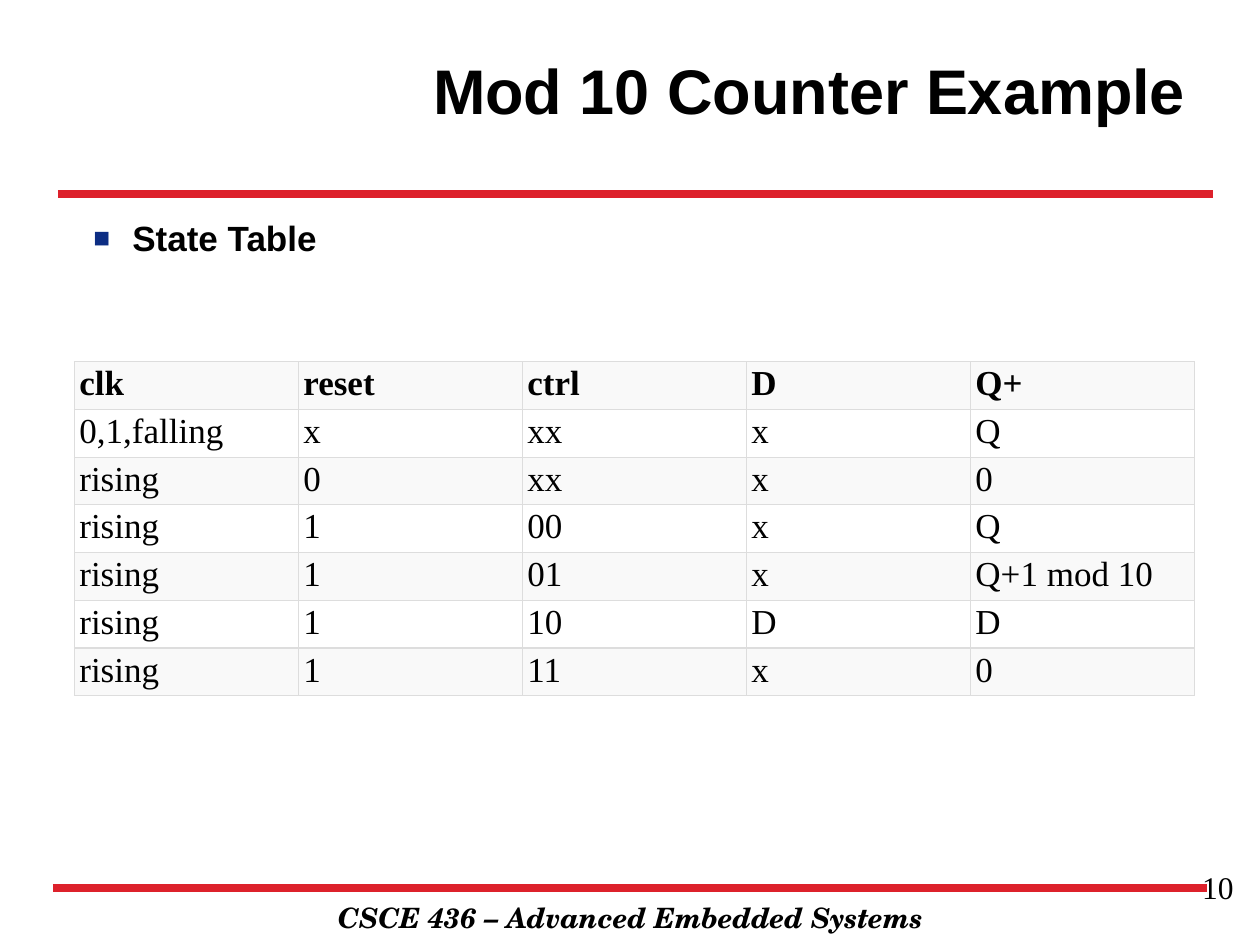
import pptx
import pptx.util
import pptx.dml.color
import pptx.enum.shapes
import pptx.enum.text
import pptx.oxml.ns
from lxml import etree

Pt = pptx.util.Pt
RGBColor = pptx.dml.color.RGBColor
ALIGN = pptx.enum.text.PP_ALIGN
ANCHOR = pptx.enum.text.MSO_ANCHOR
qn = pptx.oxml.ns.qn

TITLE = "Mod 10 Counter Example"
BULLET = "State Table"
FOOTER = "CSCE 436 – Advanced Embedded Systems"
NUMBER = "10"
STATES = [
    ("clk", "reset", "ctrl", "D", "Q+"),
    ("0,1,falling", "x", "xx", "x", "Q"),
    ("rising", "0", "xx", "x", "0"),
    ("rising", "1", "00", "x", "Q"),
    ("rising", "1", "01", "x", "Q+1 mod 10"),
    ("rising", "1", "10", "D", "D"),
    ("rising", "1", "11", "x", "0"),
]
RULES = [(4.2, 95.8, 94), (4.6, 96.3, 20.53)]

BLACK = RGBColor(0x00, 0x00, 0x00)
WHITE = RGBColor(0xFF, 0xFF, 0xFF)
RED = RGBColor(0xDD, 0x21, 0x2B)
NAVY = RGBColor(0x0C, 0x2D, 0x83)
BAND = RGBColor(0xF9, 0xF9, 0xF9)
BORDER = RGBColor(0xDD, 0xDD, 0xDD)

prs = pptx.Presentation()
prs.slide_width = pptx.util.Inches(10)
prs.slide_height = pptx.util.Inches(7.5)


def across(percent):
    return round(prs.slide_width * percent / 100)


def down(percent):
    return round(prs.slide_height * percent / 100)


def box(left, top, width, height):
    return across(left), down(top), across(width), down(height)


def place(shape, *area):
    shape.left, shape.top, shape.width, shape.height = box(*area)


def write(tf, text, size=20, font="Times New Roman", bold=False, italic=False,
          align=ALIGN.LEFT, anchor=ANCHOR.TOP):
    tf.word_wrap = True
    tf.vertical_anchor = anchor
    p = tf.paragraphs[0]
    p.alignment = align
    p.space_before = Pt(0)
    r = p.add_run()
    r.text = text
    r.font.size = Pt(size)
    r.font.name = font
    r.font.bold = bold
    r.font.italic = italic
    r.font.color.rgb = BLACK
    return p


def add_bullet(p, char, color, size, indent):
    pPr = p._p.get_or_add_pPr()
    pPr.set("marL", str(across(indent)))
    pPr.set("indent", str(-across(indent)))
    clr = etree.SubElement(pPr, qn("a:buClr"))
    etree.SubElement(clr, qn("a:srgbClr"), val=str(color))
    etree.SubElement(pPr, qn("a:buSzPct"), val=str(size * 1000))
    etree.SubElement(pPr, qn("a:buFont"), typeface="Arial")
    etree.SubElement(pPr, qn("a:buChar"), char=char)


def add_borders(cell, color, width):
    tcPr = cell._tc.get_or_add_tcPr()
    for side in ("a:lnL", "a:lnR", "a:lnT", "a:lnB"):
        ln = etree.SubElement(tcPr, qn(side), w=str(Pt(width)))
        fill = etree.SubElement(ln, qn("a:solidFill"))
        etree.SubElement(fill, qn("a:srgbClr"), val=str(color))


def add_rule(s, start, end, y):
    line = s.shapes.add_connector(pptx.enum.shapes.MSO_CONNECTOR.STRAIGHT,
                                  across(start), down(y), across(end), down(y))
    line.line.color.rgb = RED
    line.line.width = Pt(4.5)
    etree.SubElement(line._element.spPr, qn("a:effectLst"))


def add_states(s):
    rows, cols = len(STATES), len(STATES[0])
    table = s.shapes.add_table(rows, cols, *box(5.9, 38.27, 88.9, 34.53)).table
    for i, values in enumerate(STATES):
        for j, value in enumerate(values):
            cell = table.cell(i, j)
            cell.margin_left = cell.margin_right = across(0.4)
            cell.margin_top = cell.margin_bottom = down(0.3)
            add_borders(cell, BORDER, 0.75)
            cell.fill.solid()
            cell.fill.fore_color.rgb = WHITE if i % 2 else BAND
            write(cell.text_frame, value, bold=i == 0)


def main():
    s = prs.slides.add_slide(prs.slide_layouts[1])
    title, body = s.placeholders
    footer = s.shapes.add_textbox(*box(14.2, 94.67, 71.7, 4.93))
    write(footer.text_frame, FOOTER, size=16, font="TeX Gyre Schola",
          bold=True, italic=True, align=ALIGN.CENTER)
    for rule in RULES:
        add_rule(s, *rule)
    place(title, 20.9, 1.07, 74.2, 16.67)
    write(title.text_frame, TITLE, size=36, font="Arial", bold=True,
          align=ALIGN.RIGHT, anchor=ANCHOR.MIDDLE)
    place(body, 6.4, 22.27, 88.9, 63.07)
    p = write(body.text_frame, BULLET, font="Arial", bold=True)
    add_bullet(p, "■", NAVY, 80, 3.1)
    number = s.shapes.add_textbox(*box(75.6, 91.2, 23.3, 6.93))
    write(number.text_frame, NUMBER, size=18, align=ALIGN.RIGHT)
    add_states(s)
    prs.save("out.pptx")


if __name__ == "__main__":
    main()
